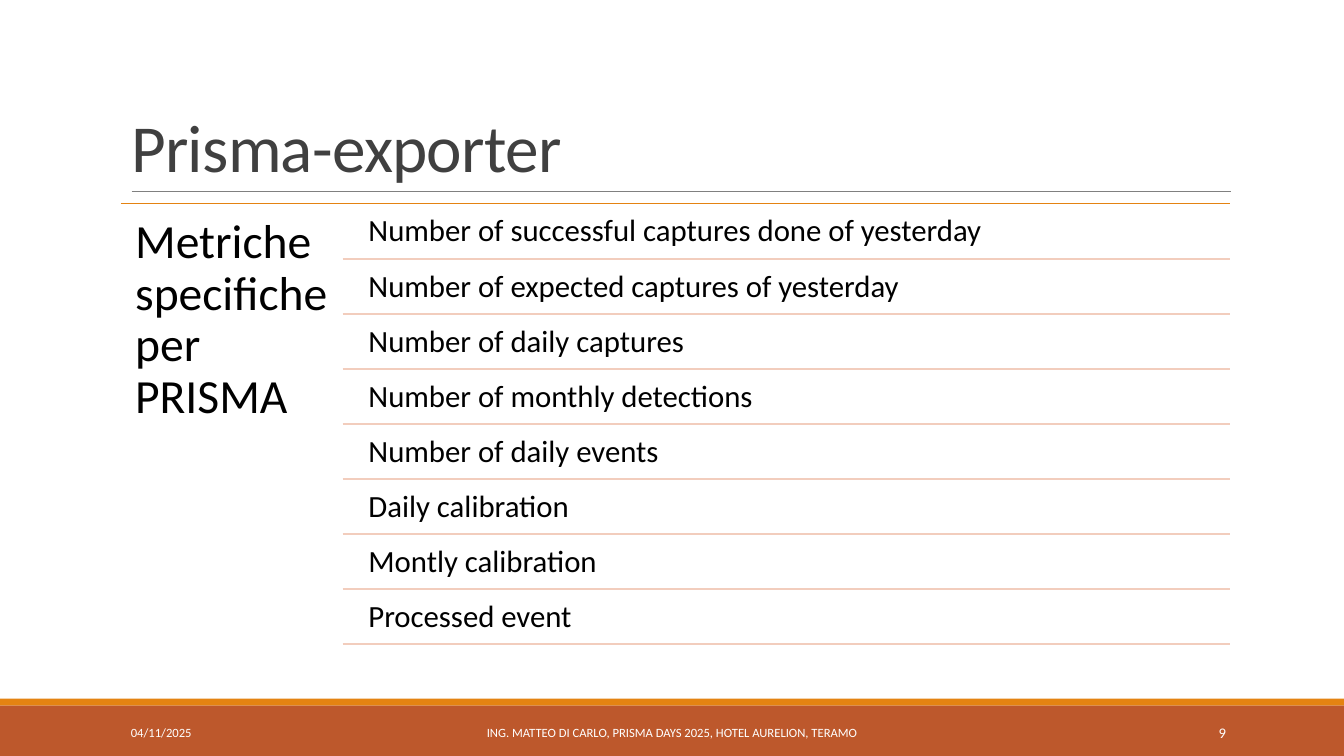
from lxml.etree import SubElement
from pptx import Presentation
from pptx.dml.color import RGBColor
from pptx.enum.shapes import MSO_CONNECTOR, MSO_SHAPE
from pptx.enum.text import MSO_ANCHOR, MSO_AUTO_SIZE, PP_ALIGN
from pptx.oxml.ns import qn
from pptx.util import Pt

FONT = "Calibri"
LEFT, RIGHT = 86.4, 878.4
ROW_LEFT, ROW_TOP, ROW_PITCH = 244.8, 145.44, 39.33
METRICS = [
    "Number of successful captures done of yesterday",
    "Number of expected captures of yesterday",
    "Number of daily captures",
    "Number of monthly detections",
    "Number of daily events",
    "Daily calibration",
    "Montly calibration",
    "Processed event",
]
BANDS = [(499, 5, "E48312"), (504, 36, "BD582C")]
FOOTERS = [
    (86.4, 194.4, "04/11/2025", 9, PP_ALIGN.LEFT),
    (290.2, 379.4, "ING. MATTEO DI CARLO, PRISMA DAYS 2025, HOTEL AURELION, TERAMO",
     9, PP_ALIGN.CENTER),
    (779.8, 103, "9", 10.5, PP_ALIGN.RIGHT),
]


def color(value):
    """Return the colour for a hex string."""
    return RGBColor.from_string(value)


def set_all(target, values):
    """Set every attribute in a dict on the target."""
    for name, value in values.items():
        setattr(target, name, value)


def write(shape, text, size, ink="000000", align=PP_ALIGN.LEFT,
          anchor=MSO_ANCHOR.TOP, spacing=0.9, inset=None):
    """Fill a shape with one formatted paragraph and return its run."""
    frame = shape.text_frame
    set_all(frame, {"word_wrap": True, "auto_size": MSO_AUTO_SIZE.NONE,
                    "vertical_anchor": anchor})
    if inset is not None:
        set_all(frame, {f"margin_{side}": Pt(inset)
                        for side in ("left", "top", "right", "bottom")})
    para = frame.paragraphs[0]
    set_all(para, {"alignment": align, "line_spacing": spacing})
    span = para.add_run()
    span.text = text
    set_all(span.font, {"name": FONT, "size": Pt(size)})
    span.font.color.rgb = color(ink)
    return span


def add_title(page, text):
    """Place and format the title placeholder."""
    title = page.shapes.title
    set_all(title, {"left": Pt(LEFT), "top": Pt(22.6),
                    "width": Pt(792), "height": Pt(114.2)})
    span = write(title, text, 48, "404040", anchor=MSO_ANCHOR.BOTTOM, spacing=0.85)
    span.font._element.set("spc", "-50")


def add_text(page, left, top, width, height, text, size, **style):
    """Add a text box."""
    box = page.shapes.add_textbox(Pt(left), Pt(top), Pt(width), Pt(height))
    write(box, text, size, **style)


def add_rule(page, left, right, top, ink, weight=1.25):
    """Add a horizontal line without a shadow."""
    rule = page.shapes.add_connector(
        MSO_CONNECTOR.STRAIGHT, Pt(left), Pt(top), Pt(right), Pt(top))
    rule.line.color.rgb = color(ink)
    rule.line.width = Pt(weight)
    SubElement(rule._element.spPr, qn("a:effectLst"))


def add_band(page, top, height, width, fill):
    """Add a full-width footer band."""
    band = page.shapes.add_shape(MSO_SHAPE.RECTANGLE, 0, Pt(top), width, Pt(height))
    band.shadow.inherit = False
    band.fill.solid()
    band.fill.fore_color.rgb = color(fill)
    band.line.fill.background()


def add_metrics(page):
    """Add the heading column and the ruled list of metrics."""
    add_rule(page, LEFT, RIGHT, ROW_TOP, "E48312")
    add_text(page, LEFT, ROW_TOP, 158.4, 316.8, "Metriche specifiche per PRISMA",
             34, inset=10.2)
    for index, metric in enumerate(METRICS):
        top = ROW_TOP + 1.8 + index * ROW_PITCH
        add_text(page, 256.6, top, 621.4, 37.4, metric, 22, inset=6.6)
        add_rule(page, ROW_LEFT, RIGHT, top + 37.5, "F2CDBD")


def main():
    """Build and save the slide."""
    deck = Presentation()
    set_all(deck, {"slide_width": Pt(960), "slide_height": Pt(540)})
    page = deck.slides.add_slide(deck.slide_layouts[5])
    add_rule(page, 94, 879, 136.8, "808080", 0.5)
    add_title(page, "Prisma-exporter")
    for top, height, fill in BANDS:
        add_band(page, top, height, deck.slide_width, fill)
    for left, width, text, size, align in FOOTERS:
        add_text(page, left, 508.6, width, 28.8, text, size, ink="FFFFFF",
                 align=align, anchor=MSO_ANCHOR.MIDDLE, spacing=1.0)
    add_metrics(page)
    deck.save("out.pptx")


if __name__ == "__main__":
    main()
